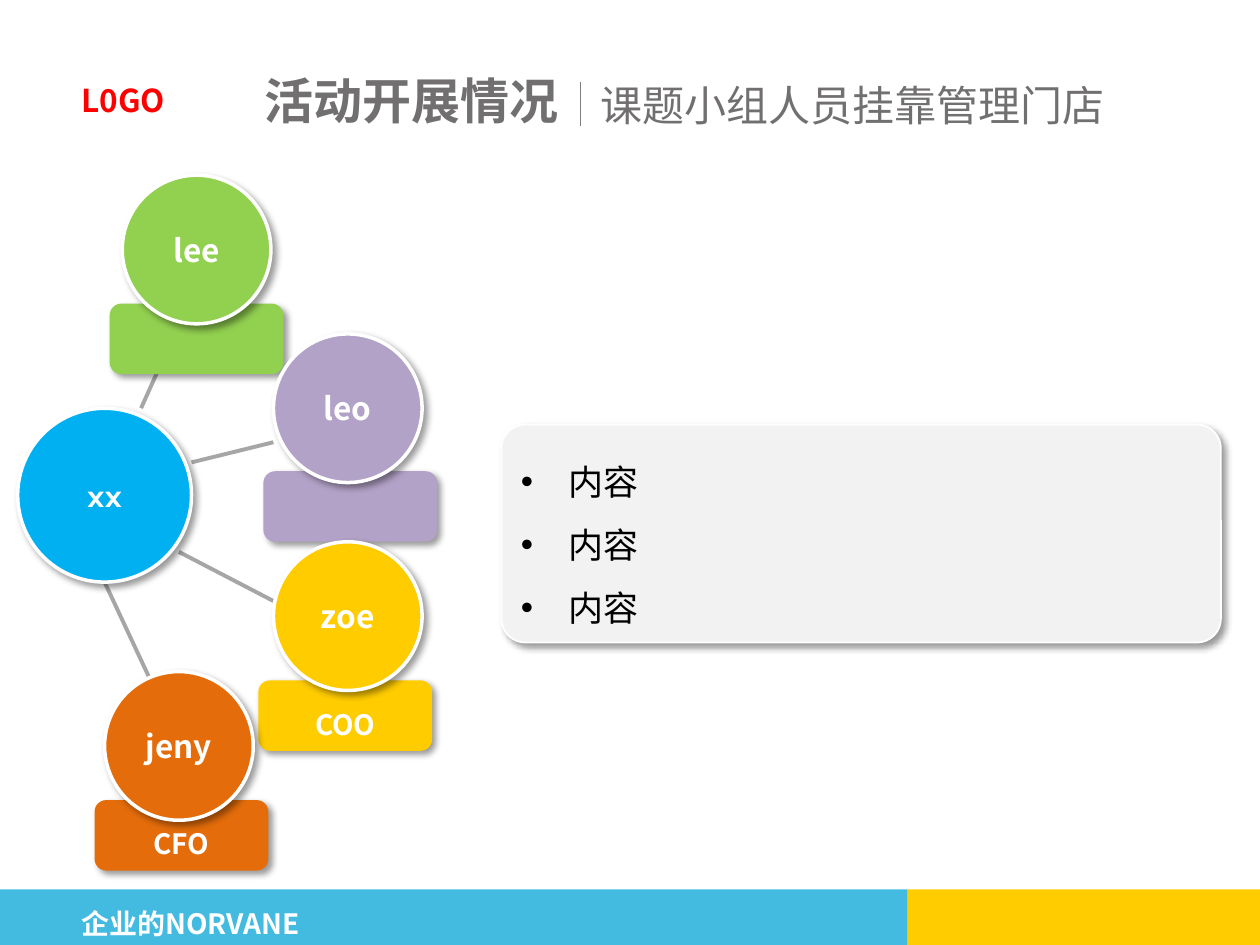
from lxml.etree import SubElement
from pptx import Presentation
from pptx.dml.color import RGBColor
from pptx.enum.shapes import MSO_CONNECTOR, MSO_SHAPE
from pptx.enum.text import MSO_ANCHOR, PP_ALIGN
from pptx.oxml.ns import qn
from pptx.util import Inches, Pt

WHITE = RGBColor(0xFF, 0xFF, 0xFF)
BLACK = RGBColor(0, 0, 0)
RED = RGBColor(0xFF, 0, 0)
YELLOW = RGBColor(0xFF, 0xCC, 0x00)
SKY = RGBColor(0x43, 0xBB, 0xE1)
BLUE = RGBColor(0x00, 0xB0, 0xF0)
GREEN = RGBColor(0x92, 0xD0, 0x50)
PURPLE = RGBColor(0xB3, 0xA2, 0xC7)
ORANGE = RGBColor(0xE4, 0x6C, 0x0A)
TITLE_GRAY = RGBColor(0x71, 0x6F, 0x70)
LINK_GRAY = RGBColor(0xA6, 0xA6, 0xA6)
RULE_GRAY = RGBColor(0x80, 0x80, 0x80)
PANEL_GRAY = RGBColor(0xF2, 0xF2, 0xF2)
SANS = "Noto Sans CJK SC"
LEFT, CENTER = PP_ALIGN.LEFT, PP_ALIGN.CENTER
TOP, MIDDLE = MSO_ANCHOR.TOP, MSO_ANCHOR.MIDDLE

prs = Presentation()
prs.slide_width, prs.slide_height = Inches(10), Inches(7.5)
COL, ROW = prs.slide_width / 100, prs.slide_height / 75
s = prs.slides.add_slide(prs.slide_layouts[5])


def add_text(sp, text, size=18, color=WHITE, bold=True, font=SANS, align=CENTER,
             anchor=MIDDLE, spacing=None, wrap=True, bullet=False):
    tf = sp.text_frame
    tf.word_wrap, tf.vertical_anchor = wrap, anchor
    tf.text = text
    for p in tf.paragraphs:
        p.alignment = align
        if spacing:
            p.line_spacing = spacing
        if bullet:
            pPr = p._p.get_or_add_pPr()
            pPr.set("marL", str(Inches(0.38)))
            pPr.set("indent", str(-Inches(0.38)))
            SubElement(pPr, qn("a:buFont"), typeface="Arial")
            SubElement(pPr, qn("a:buChar"), char="•")
        for r in p.runs:
            r.font.size, r.font.bold, r.font.name = Pt(size), bold, font
            r.font.color.rgb = color
            SubElement(r._r.get_or_add_rPr(), qn("a:ea"), typeface=font)


def add_box(kind, x, y, w, h, fill, line=None, shadow=True):
    sp = s.shapes.add_shape(kind, int(x * COL), int(y * ROW), int(w * COL), int(h * ROW))
    sp.fill.solid()
    sp.fill.fore_color.rgb = fill
    if line:
        sp.line.color.rgb, sp.line.width = WHITE, Pt(line)
    else:
        sp.line.fill.background()
    sp.shadow.inherit = False
    if shadow:
        effects = sp._element.spPr.find(qn("a:effectLst"))
        outer = SubElement(effects, qn("a:outerShdw"), blurRad=str(Pt(4)), dist=str(Pt(3)),
                           dir="2700000", algn="tl", rotWithShape="0")
        clr = SubElement(outer, qn("a:srgbClr"), val="000000")
        SubElement(clr, qn("a:alpha"), val="40000")
    return sp


for x, w, color in [(72, 28, YELLOW), (0, 72, SKY)]:
    add_box(MSO_SHAPE.RECTANGLE, x, 70.6, w, 4.4, color, shadow=False)

title = s.shapes.title
title.left, title.top = int(20 * COL), int(3.7 * ROW)
title.width, title.height = int(74.1 * COL), int(8.5 * ROW)
add_text(title, "活动开展情况", size=28, color=TITLE_GRAY, align=LEFT)

for text, x, y, w, h, style in [
    ("企业的NORVANE", 5.5, 70.1, 50, 5, dict(size=16, spacing=1.5)),
    ("L0GO", 5.5, 5.9, 9, 4, dict(color=RED, wrap=False)),
    ("课题小组人员挂靠管理门店", 46.7, 5.8, 42.4, 5.1,
     dict(size=24, color=TITLE_GRAY, bold=False, wrap=False)),
]:
    sp = s.shapes.add_textbox(int(x * COL), int(y * ROW), int(w * COL), int(h * ROW))
    add_text(sp, text, align=LEFT, anchor=TOP, **style)

for x1, y1, x2, y2, color, width in [
    (46.1, 6.5, 46.1, 10, RULE_GRAY, 0.75),
    (11.2, 32.4, 14.2, 25.7, LINK_GRAY, 2.25),
    (15.2, 36.7, 21.7, 35.1, LINK_GRAY, 2.25),
    (14.2, 43.8, 21.7, 47.7, LINK_GRAY, 2.25),
    (8.3, 46.2, 12.7, 55.6, LINK_GRAY, 2.25),
]:
    link = s.shapes.add_connector(MSO_CONNECTOR.STRAIGHT, int(x1 * COL), int(y1 * ROW),
                                  int(x2 * COL), int(y2 * ROW))
    link.line.color.rgb, link.line.width = color, Pt(width)
    SubElement(link._element.spPr, qn("a:effectLst"))

for role, x, y, color in [("", 8.7, 24.1, GREEN), ("", 20.9, 37.4, PURPLE),
                          ("COO", 20.5, 54, YELLOW), ("CFO", 7.5, 63.5, ORANGE)]:
    sp = add_box(MSO_SHAPE.ROUNDED_RECTANGLE, x, y, 13.8, 5.6, color)
    if role:
        add_text(sp, role, size=16, spacing=1.5)

for name, x, y, d, color, font in [
    ("xx", 1.4, 32.4, 13.8, BLUE, "Karla"),
    ("jeny", 8.3, 53.3, 11.8, ORANGE, SANS),
    ("zoe", 21.7, 43, 11.8, YELLOW, SANS),
    ("leo", 21.7, 26.5, 11.8, PURPLE, SANS),
    ("lee", 9.7, 13.9, 11.8, GREEN, SANS),
]:
    sp = add_box(MSO_SHAPE.OVAL, x, y, d, d, color, line=2)
    sp.text_frame.margin_left = sp.text_frame.margin_right = 0
    add_text(sp, name, font=font)

panel = add_box(MSO_SHAPE.ROUNDED_RECTANGLE, 39.8, 33.7, 57.1, 17.3, PANEL_GRAY, line=1)
panel.adjustments[0] = 0.11
add_text(panel, "\n".join(["内容"] * 3), size=20, color=BLACK, bold=False,
         align=LEFT, spacing=1.5, bullet=True)

prs.save("out.pptx")
